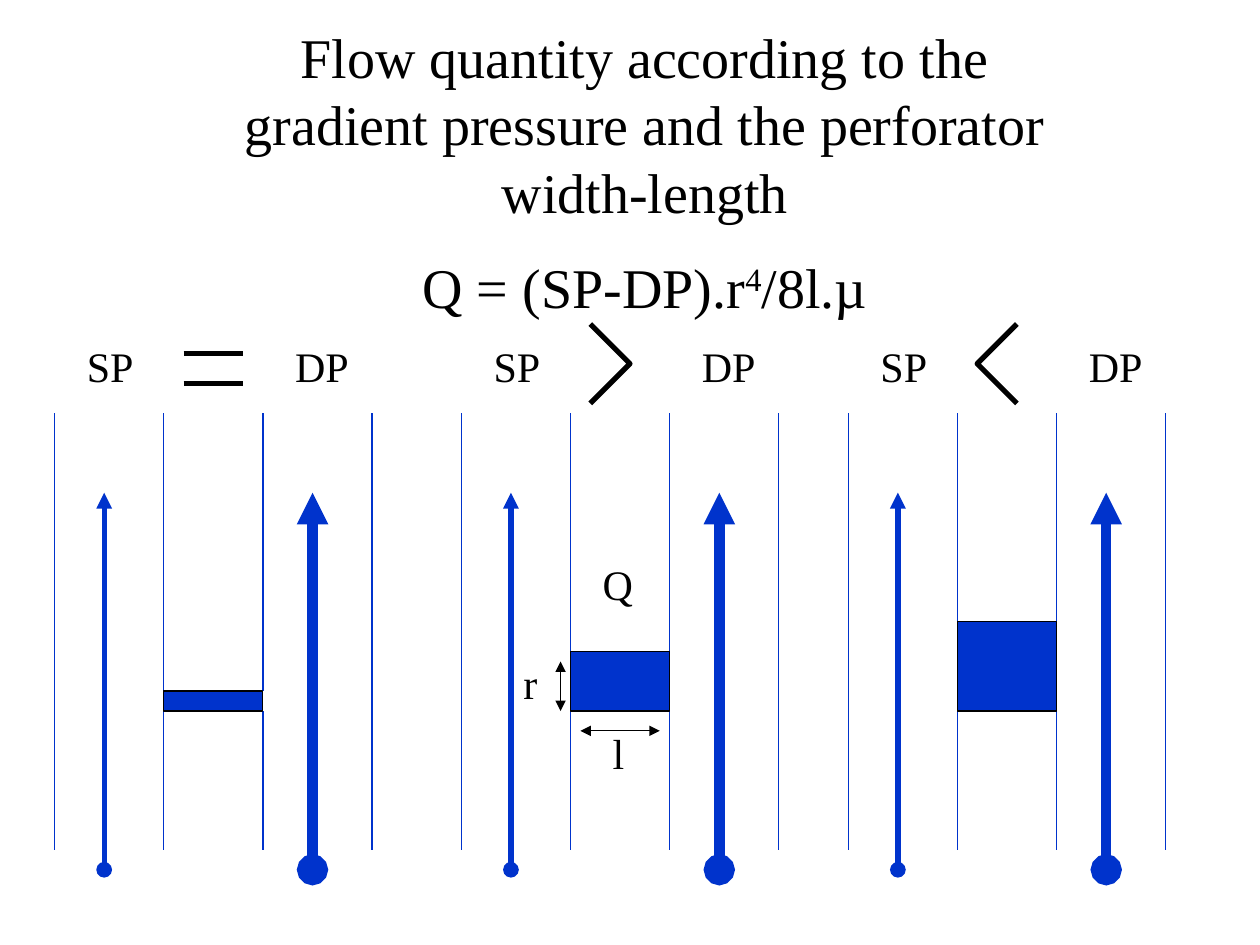
from lxml import etree
from pptx import Presentation
from pptx.dml.color import RGBColor
from pptx.enum.shapes import MSO_CONNECTOR, MSO_SHAPE
from pptx.enum.text import MSO_AUTO_SIZE, PP_ALIGN
from pptx.oxml.ns import qn
from pptx.util import Inches, Pt

STRAIGHT = MSO_CONNECTOR.STRAIGHT
RECT = MSO_SHAPE.RECTANGLE
LEFT, CENTER = PP_ALIGN.LEFT, PP_ALIGN.CENTER
GROW = MSO_AUTO_SIZE.SHAPE_TO_FIT_TEXT

COLORS = {"ink": "000000", "blue": "0033CC"}
FONT = "Times New Roman"
WIDE, HIGH = 10, 7.5
UNIT = WIDE / 127          # the slide is 127 columns wide
DX, DY = 0.5, 2 / 3        # where column 0 and row 0 lie, in units

# Rows shared by all three panels
TOP, BASE, TIP, TAIL, FLOOR = 41, 85, 49, 87, 71
# Columns of a panel, from its left wall
WALLS, INNER = (0, 32), (11, 21)


class Board:
    """Draws on one slide, with lengths given in grid columns and rows."""

    def __init__(self, deck):
        self.slide = deck.slides.add_slide(deck.slide_layouts[6])
        self.shapes = self.slide.shapes

    def size(self, n):
        return Inches(n * UNIT)

    def spot(self, col, row):
        return self.size(col + DX), self.size(row + DY)

    def color(self, name):
        return RGBColor.from_string(COLORS[name])

    def pen(self, shape, color, width):
        shape.line.color.rgb = self.color(color)
        shape.line.width = Pt(width)

    def line(self, start, end, color="blue", width=0.75, head=None, tail=None):
        item = self.shapes.add_connector(
            STRAIGHT, *self.spot(*start), *self.spot(*end))
        self.pen(item, color, width)
        props = item._element.spPr
        stroke = props.find(qn("a:ln"))
        for tag, kind in (("a:headEnd", head), ("a:tailEnd", tail)):
            if kind:
                etree.SubElement(stroke, qn(tag), type=kind)
        etree.SubElement(props, qn("a:effectLst"))

    def block(self, col, row, wide, high):
        item = self.shapes.add_shape(
            RECT, *self.spot(col, row), self.size(wide), self.size(high))
        item.shadow.inherit = False
        item.fill.solid()
        item.fill.fore_color.rgb = self.color("blue")
        self.pen(item, "ink", 0.75)

    def angle(self, points):
        """Draw an open bent line through the points."""
        first, *rest = [self.spot(*p) for p in points]
        form = self.shapes.build_freeform(*first)
        form.add_line_segments(rest, close=False)
        item = form.convert_to_shape()
        item.shadow.inherit = False
        item.fill.background()
        self.pen(item, "ink", 3)

    def text(self, col, row, wide, high, paras, size=24, align=LEFT):
        """Write paragraphs, each a list of (words, baseline) runs."""
        box = self.shapes.add_textbox(
            *self.spot(col, row), self.size(wide), self.size(high))
        frame = box.text_frame
        frame.word_wrap = True
        frame.auto_size = GROW
        for i, runs in enumerate(paras):
            para = frame.paragraphs[0] if i == 0 else frame.add_paragraph()
            para.alignment = align
            para.space_before = Pt(size / 2)
            for words, raised in runs:
                run = para.add_run()
                run.text = words
                style = {"name": FONT, "size": Pt(size)}
                for key, value in style.items():
                    setattr(run.font, key, value)
                run.font.color.rgb = self.color("ink")
                if raised:
                    run.font._element.set("baseline", str(raised))

    def label(self, col, row, wide, words):
        self.text(col, row, wide, 6.35, [[(words, 0)]])

    def panel(self, left, roof):
        """Draw two vessels joined by a perforator whose top is at roof."""
        for wall in WALLS:
            self.line((left + wall, TOP), (left + wall, BASE))
        near, far = (left + c for c in INNER)
        for col in (near, far):
            self.line((col, TOP), (col, roof))
            self.line((col, FLOOR), (col, BASE))
        for row in (roof, FLOOR):
            self.line((near, row), (far, row))
        self.block(near, roof, far - near, FLOOR - roof)
        for name, col, width in (("SP", 5, 3), ("DP", 26, 6)):
            self.line((left + col, TAIL), (left + col, TIP),
                      width=width, head="oval", tail="triangle")
            self.label(left + col - 3, 33, 8, name)


def main():
    deck = Presentation()
    deck.slide_width, deck.slide_height = Inches(WIDE), Inches(HIGH)
    board = Board(deck)

    board.text(21, 1, 87, 31.75, [
        [("Flow quantity according to the gradient pressure "
          "and the perforator width-length", 0)],
        [("Q = (SP-DP).r", 0), ("4", 30000), ("/8l.µ", 0)],
    ], size=32, align=CENTER)

    equal, more, less = 5, 46, 85
    for left, roof in ((equal, 69), (more, 65), (less, 62)):
        board.panel(left, roof)

    for row in (35, 38):
        board.line((equal + 13, row), (equal + 19, row), "ink", 3)
    for left, side, point in ((more, 13, 17), (less, 17, 13)):
        board.angle([(left + side, 32), (left + point, 36),
                     (left + side, 40)])

    both = {"color": "ink", "head": "triangle", "tail": "triangle"}
    board.line((more + 12, 73), (more + 20, 73), **both)
    board.line((more + 10, 66), (more + 10, FLOOR), **both)
    for words, col, row in (("Q", 13, 55), ("l", 14, 72), ("r", 5, 65)):
        board.label(more + col, row, 6, words)

    deck.save("out.pptx")


if __name__ == "__main__":
    main()
